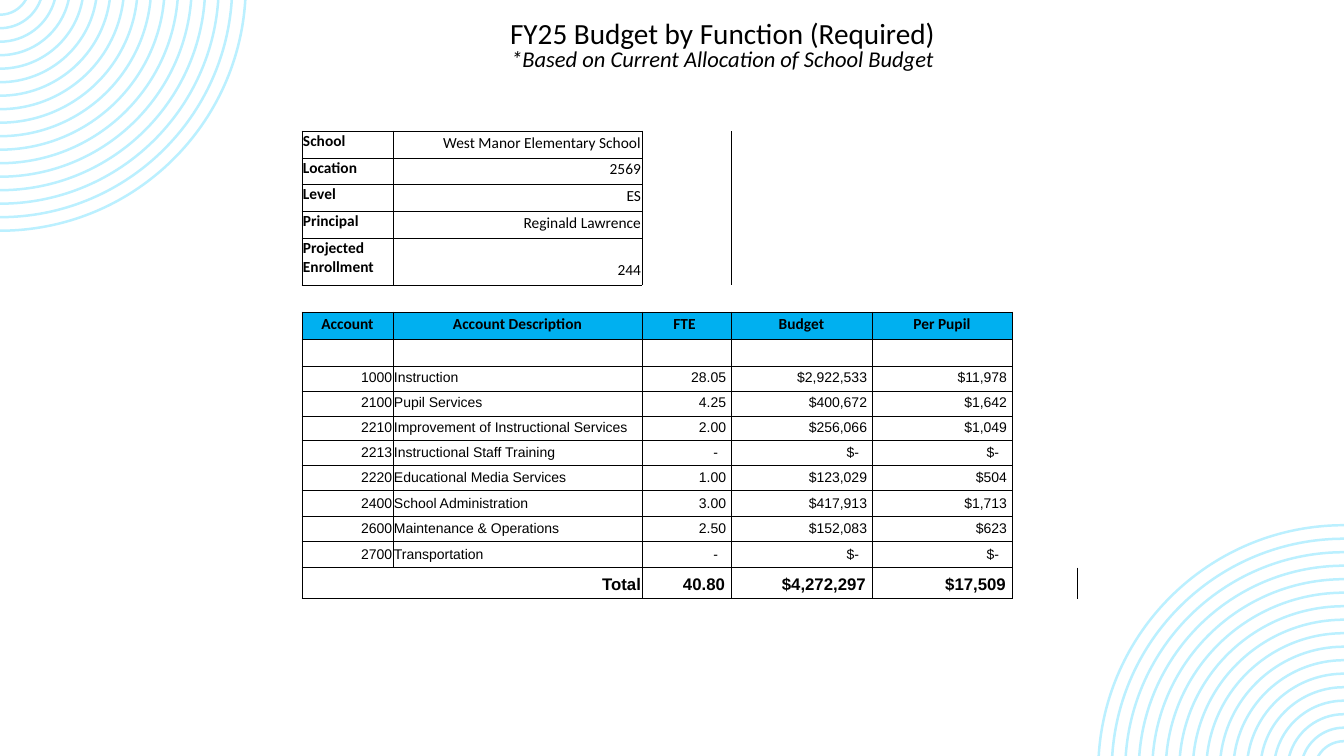
from math import asin, cos, pi, sin, tan

from lxml.etree import SubElement
from pptx import Presentation
from pptx.dml.color import RGBColor
from pptx.enum.text import MSO_ANCHOR, PP_ALIGN
from pptx.oxml.ns import qn
from pptx.util import Pt

SLIDE_W, SLIDE_H = 1344, 756
EMU_PER_PX = 12192000 / SLIDE_W

BLACK = RGBColor(0x00, 0x00, 0x00)
WHITE = RGBColor(0xFF, 0xFF, 0xFF)
HEADER_BLUE = RGBColor(0x00, 0xB0, 0xF0)
RING_BLUE = RGBColor(0xBB, 0xF0, 0xFF)
NO_STYLE = "{2D5ABB26-0587-4C30-8999-92F81FD0307C}"

COL_WIDTHS = [91, 249, 89, 141, 140, 65]
ROW_HEIGHTS = [27, 26, 27, 27, 47, 27, 27, 27, 25, 25, 25, 25, 25, 26, 25, 26, 31]
GAP_ROW, HEADER_ROW, FIRST_ACCOUNT_ROW = 5, 6, 8
TOTAL_ROW = len(ROW_HEIGHTS) - 1

SCHOOL = [
    ("School", "West Manor Elementary School"),
    ("Location", "2569"),
    ("Level", "ES"),
    ("Principal", "Reginald Lawrence"),
    ("Projected Enrollment", "244"),
]
HEADERS = ["Account", "Account Description", "FTE", "Budget", "Per Pupil"]
ACCOUNTS = [
    ("1000", "Instruction", "28.05", "$2,922,533", "$11,978"),
    ("2100", "Pupil Services", "4.25", "$400,672", "$1,642"),
    ("2210", "Improvement of Instructional Services", "2.00", "$256,066", "$1,049"),
    ("2213", "Instructional Staff Training", "-", "$-", "$-"),
    ("2220", "Educational Media Services", "1.00", "$123,029", "$504"),
    ("2400", "School Administration", "3.00", "$417,913", "$1,713"),
    ("2600", "Maintenance & Operations", "2.50", "$152,083", "$623"),
    ("2700", "Transportation", "-", "$-", "$-"),
]
TOTALS = ["40.80", "$4,272,297", "$17,509"]


def px(n):
    return round(n * EMU_PER_PX)


def add_run(p, text, size, font="Calibri", bold=False, italic=False):
    r = p.add_run()
    r.text = text
    r.font.name, r.font.size = font, Pt(size)
    r.font.bold, r.font.italic = bold, italic
    r.font.color.rgb = BLACK


def join_as_curve(segments):
    """Turn three line segments into one Bezier curve through their points."""
    first = segments[0]
    curve = first.makeelement(qn("a:cubicBezTo"))
    first.addprevious(curve)
    for segment in segments:
        curve.append(segment[0])
        segment.getparent().remove(segment)


def add_corner_rings(s, corner_x, corner_y, direction):
    """Quarter rings cut off by the slide edge; direction 1 opens down-right, -1 up-left."""
    beyond_edge = 15

    def bezier_points(radius):
        start = asin(beyond_edge / radius)
        k = 4 / 3 * tan((pi / 2 - start) / 4)
        x, y = cos(start), sin(start)
        unit_points = [(x, y), (x - k * y, y + k * x), (k, 1), (0, 1)]
        return [(px(corner_x + direction * radius * ux),
                 px(corner_y + direction * (radius * uy - beyond_edge)))
                for ux, uy in unit_points]

    builder = None
    for ring in range(17):
        outer = 247 - 13.5 * ring
        points = bezier_points(outer) + bezier_points(outer - 2.5)[::-1]
        if builder is None:
            builder = s.shapes.build_freeform(*points[0], scale=1.0)
        else:
            builder.move_to(*points[0])
        builder.add_line_segments(points[1:], close=True)
    sp = builder.convert_to_shape()
    for move in list(sp._element.iter(qn("a:moveTo"))):
        segments = list(move.itersiblings())[:7]
        join_as_curve(segments[:3])
        join_as_curve(segments[4:])
    sp.shadow.inherit = False
    sp.fill.solid()
    sp.fill.fore_color.rgb = RING_BLUE
    sp.line.fill.background()


def add_title(s):
    tf = s.shapes.add_textbox(px(269), px(22), px(907), px(73)).text_frame
    tf.word_wrap = True
    tf.margin_top = tf.margin_bottom = 0
    lines = [("FY25 Budget by Function (Required)", 20.9, False),
             ("*Based on Current Allocation of School Budget", 16.1, True)]
    for i, (text, size, italic) in enumerate(lines):
        p = tf.add_paragraph() if i else tf.paragraphs[0]
        p.alignment, p.line_spacing = PP_ALIGN.CENTER, 0.8
        add_run(p, text, size, italic=italic)


def write_cell(cell, text, size, align=PP_ALIGN.RIGHT, anchor=MSO_ANCHOR.BOTTOM,
               right=1, **style):
    cell.vertical_anchor, cell.margin_right = anchor, px(right)
    p = cell.text_frame.paragraphs[0]
    p.alignment = align
    add_run(p, text, size, **style)


def is_ruled(row, col):
    """Whether the cell belongs to the school block or the budget block."""
    return 0 <= col < 2 and 0 <= row < GAP_ROW or 0 <= col < 5 and GAP_ROW < row <= TOTAL_ROW


def add_borders(cell, row, col):
    tc_pr = cell._tc.get_or_add_tcPr()
    sides = [("a:lnL", 0, -1), ("a:lnR", 0, 1), ("a:lnT", -1, 0), ("a:lnB", 1, 0)]
    for tag, down, across in sides:
        if is_ruled(row, col) or is_ruled(row + down, col + across):
            ln = SubElement(tc_pr, qn(tag), w=str(Pt(0.5)))
            SubElement(SubElement(ln, qn("a:solidFill")), qn("a:srgbClr"), val=str(BLACK))


def prepare_cell(cell, row, col):
    """Give a cell its insets, borders and fill before any text."""
    cell.margin_left = cell.margin_top = cell.margin_right = px(1)
    cell.margin_bottom = px(5)
    SubElement(cell.text_frame.paragraphs[0]._p, qn("a:endParaRPr"), sz="1000")
    add_borders(cell, row, col)
    if row >= HEADER_ROW and col < len(HEADERS):
        cell.fill.solid()
        cell.fill.fore_color.rgb = HEADER_BLUE if row == HEADER_ROW else WHITE
    else:
        cell.fill.background()


def add_budget_table(s):
    frame = s.shapes.add_table(len(ROW_HEIGHTS), len(COL_WIDTHS), px(302), px(131),
                               px(sum(COL_WIDTHS)), px(sum(ROW_HEIGHTS)))
    table = frame.table
    table.first_row = table.horz_banding = False
    table._tbl.tblPr.find(qn("a:tableStyleId")).text = NO_STYLE
    for col, width in enumerate(COL_WIDTHS):
        table.columns[col].width = px(width)
    for row, height in enumerate(ROW_HEIGHTS):
        table.rows[row].height = px(height)
        for col in range(len(COL_WIDTHS)):
            prepare_cell(table.cell(row, col), row, col)

    for row, (label, value) in enumerate(SCHOOL):
        write_cell(table.cell(row, 0), label, 11, PP_ALIGN.LEFT, MSO_ANCHOR.TOP, bold=True)
        write_cell(table.cell(row, 1), value, 11)
    for col, header in enumerate(HEADERS):
        write_cell(table.cell(HEADER_ROW, col), header, 11, PP_ALIGN.CENTER,
                   right=5 if header == "FTE" else 1, bold=True)
    for row, account in enumerate(ACCOUNTS, FIRST_ACCOUNT_ROW):
        for col, text in enumerate(account):
            right = 1 if col < 2 else 13 if text.endswith("-") else 5
            align = PP_ALIGN.LEFT if col == 1 else PP_ALIGN.RIGHT
            write_cell(table.cell(row, col), text, 10, align, right=right, font="Arial")

    table.cell(TOTAL_ROW, 0).merge(table.cell(TOTAL_ROW, 1))
    write_cell(table.cell(TOTAL_ROW, 0), "Total", 12, font="Arial", bold=True)
    for col, total in enumerate(TOTALS, 2):
        write_cell(table.cell(TOTAL_ROW, col), total, 12, right=6, font="Arial", bold=True)


def main():
    prs = Presentation()
    prs.slide_width, prs.slide_height = px(SLIDE_W), px(SLIDE_H)
    s = prs.slides.add_slide(prs.slide_layouts[6])
    add_corner_rings(s, 0, 0, 1)
    add_corner_rings(s, SLIDE_W, SLIDE_H, -1)
    add_title(s)
    add_budget_table(s)
    prs.save("out.pptx")


if __name__ == "__main__":
    main()
